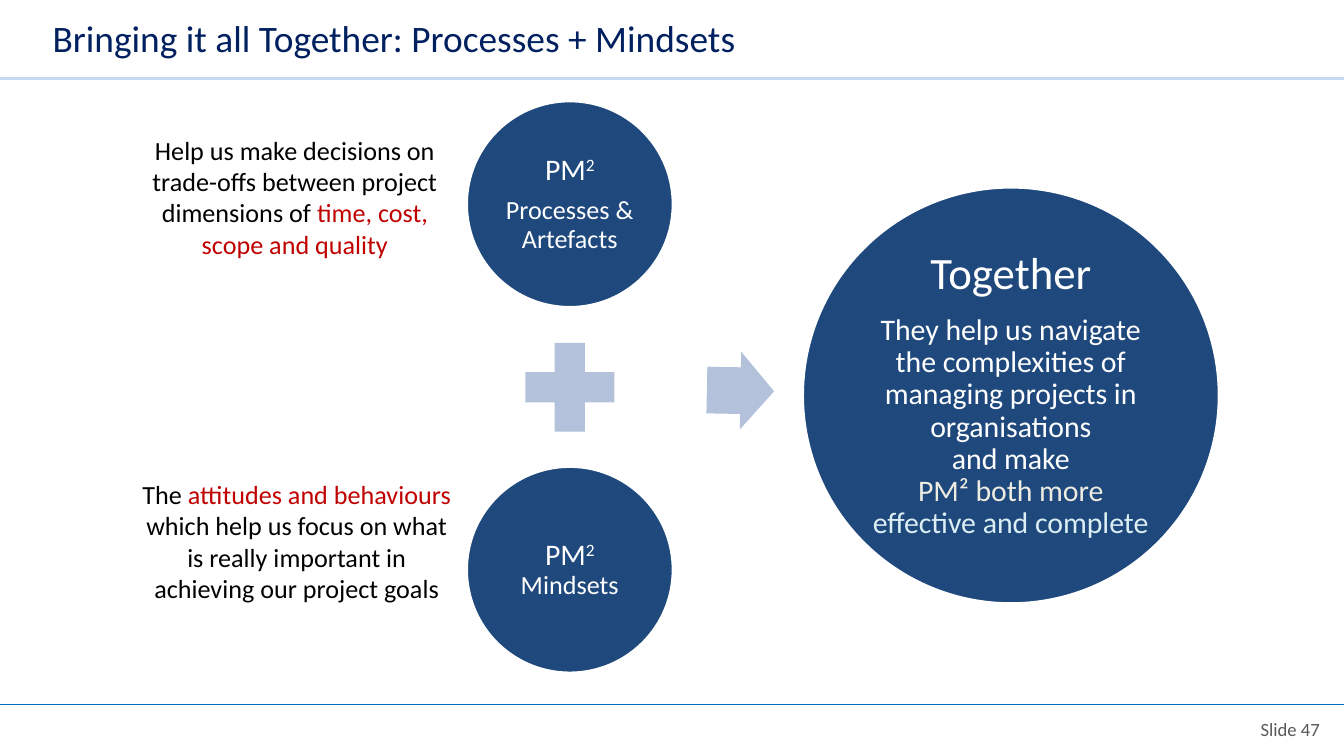
from copy import deepcopy

from lxml.etree import SubElement
from pptx import Presentation
from pptx.dml.color import RGBColor
from pptx.enum.shapes import MSO_CONNECTOR, MSO_SHAPE
from pptx.enum.text import MSO_ANCHOR, PP_ALIGN
from pptx.oxml.ns import qn
from pptx.util import Cm, Pt

NAVY, BLUE, PALE_BLUE = "002060", "1F497D", "B3C1DB"
WHITE, BLACK, RED, GREY = "FFFFFF", "000000", "C00000", "595959"


def color(hex_code):
    return RGBColor.from_string(hex_code)


def add_run(paragraph, text, size, hex_code, superscript=False, line_break=False):
    """Append a formatted run, optionally raised or followed by a line break."""
    run = paragraph.add_run()
    run.text = text
    run.font.name = "Calibri"
    run.font.size = Pt(size)
    run.font.color.rgb = color(hex_code)
    if line_break:
        paragraph.add_line_break()
        paragraph._p[-1].append(deepcopy(run._r.rPr))
    if superscript:
        run._r.rPr.set("baseline", "30000")


presentation = Presentation()
presentation.slide_width = Cm(25.4)
presentation.slide_height = Cm(14.29)
slide = presentation.slides.add_slide(presentation.slide_layouts[5])
shapes = slide.shapes

# Title
title = shapes.title
title.left, title.top, title.width, title.height = Cm(0.74), Cm(0), Cm(19.96), Cm(1.42)
title.text_frame.vertical_anchor = MSO_ANCHOR.MIDDLE
paragraph = title.text_frame.paragraphs[0]
paragraph.alignment = PP_ALIGN.LEFT
add_run(paragraph, "Bringing it all Together: Processes + Mindsets", 20, NAVY)

# Header and footer rules
for top, hex_code, width in ((1.48, "C6D9F1", 1.75), (13.31, "0070C0", 0.25)):
    rule = shapes.add_connector(MSO_CONNECTOR.STRAIGHT, Cm(0), Cm(top), Cm(25.4), Cm(top))
    rule.line.color.rgb = color(hex_code)
    rule.line.width = Pt(width)
    SubElement(rule._element.spPr, qn("a:effectLst"))

# Explanations and slide number: left, top, width, height, runs
text_boxes = [
    (2.21, 2.41, 6.73, 3.25, [
        ("Help us make decisions on trade-offs between project dimensions of ", 14, BLACK),
        ("time, cost, scope and quality", 14, RED)]),
    (2.41, 8.92, 6.4, 3.25, [
        ("The ", 14, BLACK),
        ("attitudes and behaviours ", 14, RED),
        ("which help us focus on what is really important in achieving our project goals",
         14, BLACK)]),
    (23.33, 13.44, 2.11, 0.69, [("Slide 47", 10, GREY)]),
]
for left, top, width, height, runs in text_boxes:
    text_box = shapes.add_textbox(Cm(left), Cm(top), Cm(width), Cm(height))
    text_box.text_frame.word_wrap = True
    paragraph = text_box.text_frame.paragraphs[0]
    paragraph.alignment = PP_ALIGN.CENTER
    for run in runs:
        add_run(paragraph, *run)

# Circles: left, top, diameter, inset, paragraphs of runs
circles = [
    (8.79, 1.88, 3.96, 0.05, [
        [("PM", 16, WHITE), ("2", 16, WHITE, True)],
        [("Processes & Artefacts", 14, WHITE)]]),
    (8.79, 8.79, 3.96, 0.05, [
        [("PM", 16, WHITE), ("2", 16, WHITE, True, True), ("Mindsets", 14, WHITE)]]),
    (15.14, 3.51, 7.93, 0.08, [
        [("Together", 24, WHITE)],
        [("They help us navigate the complexities of managing projects in organisations",
          16, WHITE, False, True),
         ("and make", 16, WHITE, False, True),
         ("PM² both more ", 16, "EEECE1"),
         ("effective and complete", 16, "DBEEF4")]]),
]
for left, top, diameter, inset, paragraphs in circles:
    circle = shapes.add_shape(MSO_SHAPE.OVAL, Cm(left), Cm(top), Cm(diameter), Cm(diameter))
    circle.shadow.inherit = False
    circle.fill.solid()
    circle.fill.fore_color.rgb = color(BLUE)
    circle.line.color.rgb = color(WHITE)
    circle.line.width = Pt(3.15)
    frame = circle.text_frame
    frame.word_wrap = True
    frame.vertical_anchor = MSO_ANCHOR.MIDDLE
    frame.margin_left = frame.margin_right = Cm(inset)
    frame.margin_top = frame.margin_bottom = Cm(inset)
    for index, runs in enumerate(paragraphs):
        paragraph = frame.add_paragraph() if index else frame.paragraphs[0]
        paragraph.alignment = PP_ALIGN.CENTER
        paragraph.line_spacing = 0.9
        paragraph.space_after = Pt(0.35 * runs[0][1])
        for run in runs:
            add_run(paragraph, *run)

# Plus sign and arrow between the circles
symbols = [
    (MSO_SHAPE.CROSS, 9.93, 6.48, 1.68, 1.68, 0, [0.33]),
    (MSO_SHAPE.RIGHT_ARROW, 13.36, 6.65, 1.27, 1.47, 1.1, [0.6, 0.5]),
]
for kind, left, top, width, height, rotation, adjustments in symbols:
    symbol = shapes.add_shape(kind, Cm(left), Cm(top), Cm(width), Cm(height))
    symbol.shadow.inherit = False
    symbol.rotation = rotation
    for index, value in enumerate(adjustments):
        symbol.adjustments[index] = value
    symbol.fill.solid()
    symbol.fill.fore_color.rgb = color(PALE_BLUE)
    symbol.line.fill.background()

presentation.save("out.pptx")
